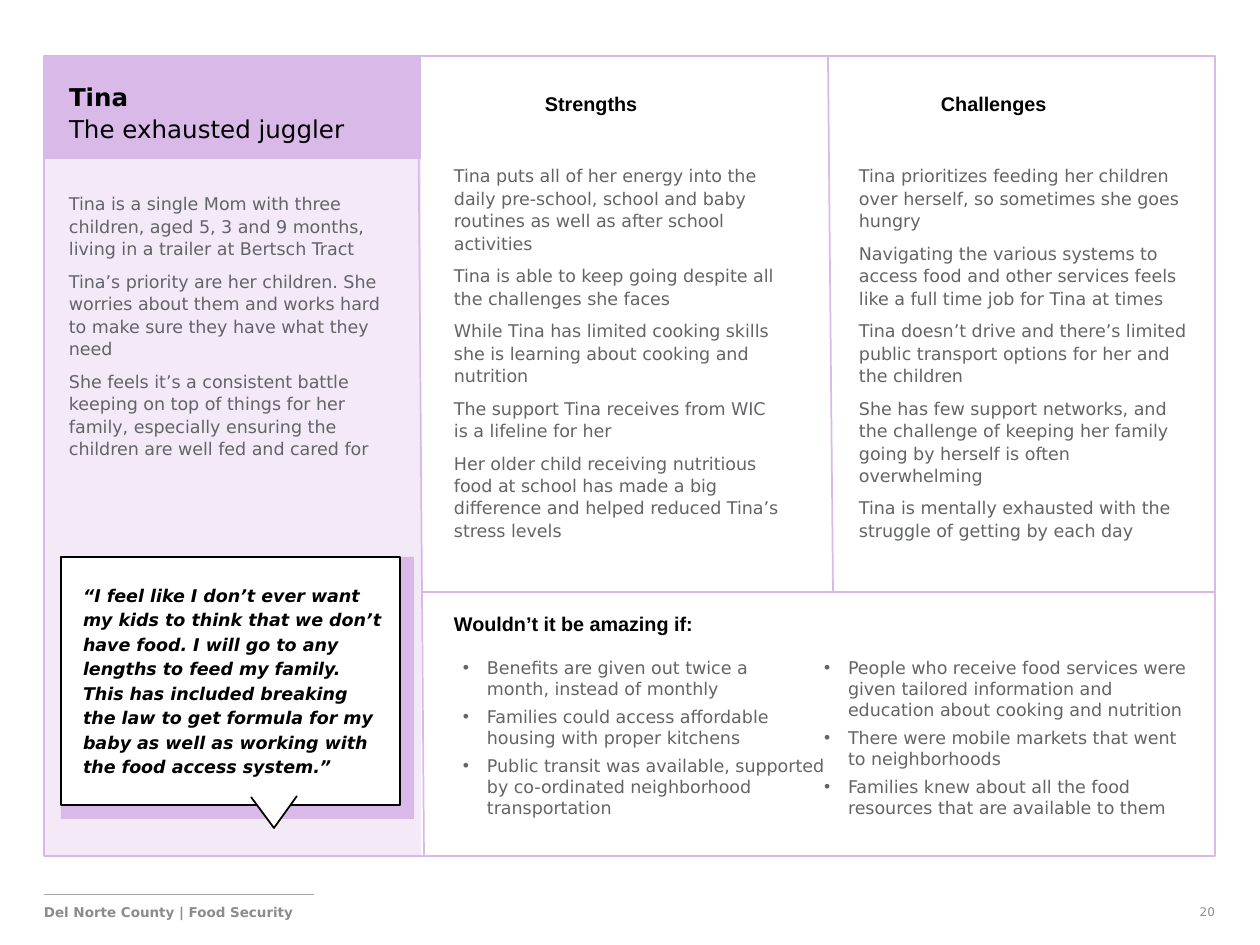
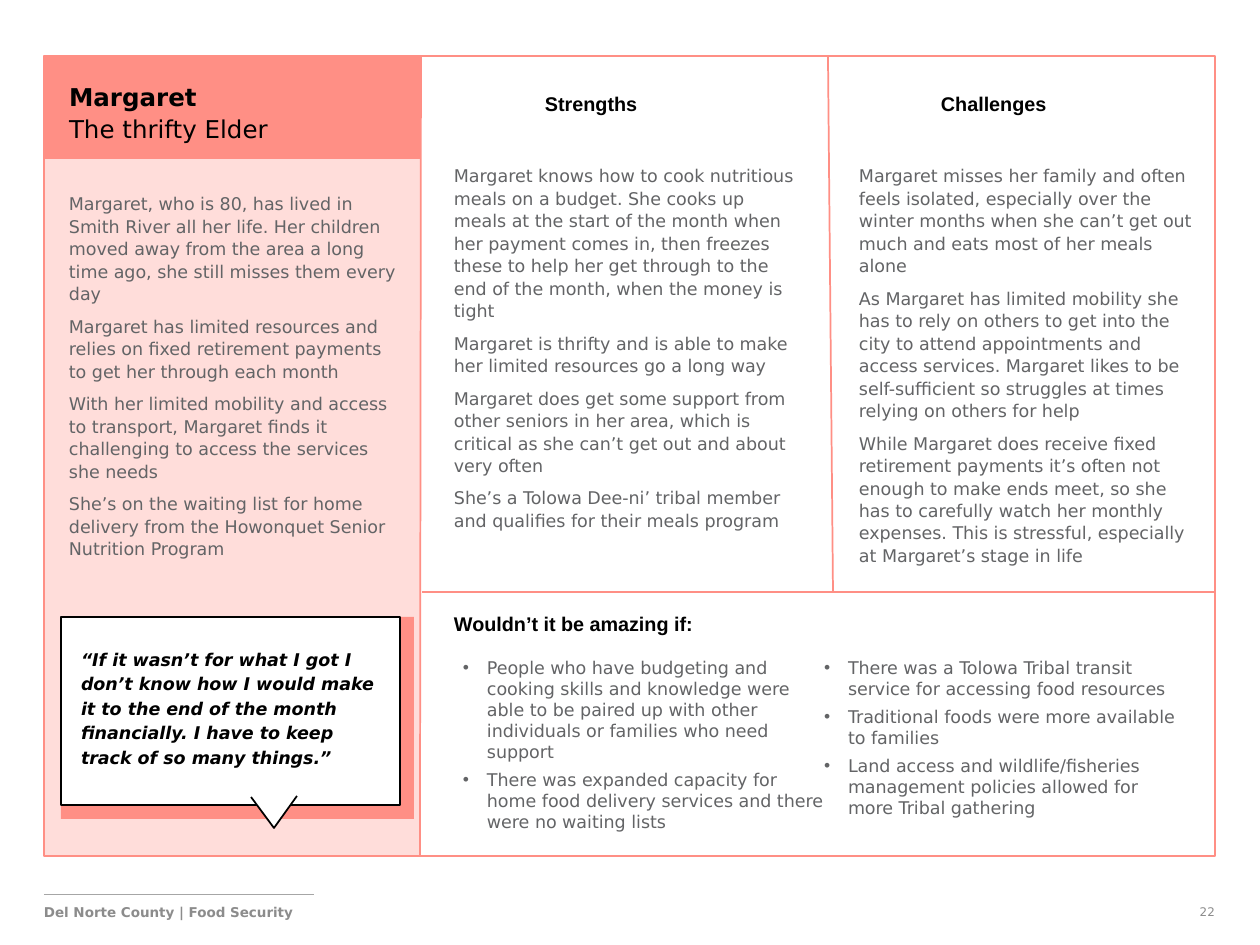
"""Builds two persona pages on food security."""
from copy import deepcopy
from dataclasses import dataclass, replace

from lxml import etree
from pptx import Presentation
from pptx.dml.color import RGBColor
from pptx.enum.shapes import MSO_CONNECTOR, MSO_SHAPE
from pptx.enum.text import MSO_ANCHOR, MSO_AUTO_SIZE, PP_ALIGN
from pptx.oxml.ns import qn
from pptx.util import Emu, Pt

SCALE = 914400 / 126
LEFT, RIGHT = PP_ALIGN.LEFT, PP_ALIGN.RIGHT
TOP, NO_FIT = MSO_ANCHOR.TOP, MSO_AUTO_SIZE.NONE
RECTANGLE, STRAIGHT = MSO_SHAPE.RECTANGLE, MSO_CONNECTOR.STRAIGHT

BLACK, WHITE, GRAY = "000000", "FFFFFF", "636466"
FOOTER_GRAY, RULE_GRAY = "8C8C8C", "A6A6A6"
FRAME_LEFT, FRAME_TOP, FRAME_RIGHT, FRAME_BOTTOM = 44, 56, 1215, 856
PANEL_WIDTH, HEADER_HEIGHT = 377, 103
QUOTE_LEFT, QUOTE_WIDTH, QUOTE_BOTTOM = 61, 339, 805
SHADOW_OFFSET = 14
WISH_LEFT, WISH_TOP, WISH_WIDTH, BULLET_INDENT = 463, 657, 361, 24


@dataclass(frozen=True)
class Style:
    """Look of the paragraphs in one box."""
    size: float = 10
    color: str = GRAY
    font: str = "DejaVu Sans"
    bold: bool = False
    italic: bool = False
    spacing: object = 1.07
    gap: float = 0
    align: object = LEFT


BODY = Style(gap=5.7)
WISH = Style(spacing=1.0, gap=4)
TITLE = Style(size=14, color=BLACK)
HEADING = Style(size=11.3, color=BLACK, font="Arial", bold=True)
QUOTE = Style(color=BLACK, bold=True, italic=True, spacing=Pt(14))
FOOTER = Style(size=7.7, color=FOOTER_GRAY, bold=True, spacing=1.0)
NUMBER = replace(FOOTER, size=6.8, bold=False, align=RIGHT)


@dataclass
class Persona:
    """Everything that differs from one page to the next."""
    name: str
    role: str
    accent: str
    number: str
    story: list
    strengths: list
    challenges: list
    wishes: list
    quote: str
    quote_top: int
    quote_text: tuple
    side_line: tuple


PERSONAS = [
    Persona(
        name="Tina", role="The exhausted juggler", accent="D8B9E7", number="20",
        story=[
            "Tina is a single Mom with three children, aged 5, 3 and 9 months, "
            "living in a trailer at Bertsch Tract",
            "Tina’s priority are her children. She worries about them and works "
            "hard to make sure they have what they need",
            "She feels it’s a consistent battle keeping on top of things for her "
            "family, especially ensuring the children are well fed and cared for",
        ],
        strengths=[
            "Tina puts all of her energy into the daily pre-school, school and "
            "baby routines as well as after school activities",
            "Tina is able to keep going despite all the challenges she faces",
            "While Tina has limited cooking skills she is learning about cooking "
            "and nutrition",
            "The support Tina receives from WIC \vis a lifeline for her",
            "Her older child receiving nutritious food at school has made a big "
            "difference and helped reduced Tina’s stress levels",
        ],
        challenges=[
            "Tina prioritizes feeding her children over herself, so sometimes "
            "she goes hungry",
            "Navigating the various systems to access food and other services "
            "feels like a full time job for Tina at times",
            "Tina doesn’t drive and there’s limited public transport options for "
            "her and the children",
            "She has few support networks, and the challenge of keeping her "
            "family going by herself is often overwhelming",
            "Tina is mentally exhausted with the struggle of getting by each day",
        ],
        wishes=[
            ["Benefits are given out twice a \vmonth, instead of monthly",
             "Families could access affordable housing with proper kitchens",
             "Public transit was available, supported by co-ordinated "
             "neighborhood transportation"],
            ["People who receive food services were given tailored information "
             "and education about cooking and nutrition",
             "There were mobile markets that went to neighborhoods",
             "Families knew about all the food resources that are available to "
             "them"],
        ],
        quote="“I feel like I don’t ever want my kids to think that we don’t have "
              "food. I will go to any lengths to feed my family. This has included "
              "breaking the law to get formula for my baby as well as working with "
              "the food access system.”",
        quote_top=557, quote_text=(79, 577, 309, 220),
        side_line=(418, 63, 424, 856),
    ),
    Persona(
        name="Margaret", role="The thrifty Elder", accent="FF8F85", number="22",
        story=[
            "Margaret, who is 80, has lived in Smith River all her life. Her "
            "children moved away from the area a long time ago, she still misses "
            "them every day",
            "Margaret has limited resources and relies on fixed retirement "
            "payments to get her through each month",
            "With her limited mobility and access to transport, Margaret finds "
            "it challenging to access the services she needs",
            "She’s on the waiting list for home delivery from the Howonquet "
            "Senior Nutrition Program",
        ],
        strengths=[
            "Margaret knows how to cook nutritious meals on a budget. She cooks "
            "up meals at the start of the month when her payment comes in, then "
            "freezes these to help her get through to the end of the month, when "
            "the money is tight",
            "Margaret is thrifty and is able to make her limited resources go a "
            "long way",
            "Margaret does get some support from other seniors in her area, "
            "which is critical as she can’t get out and about very often",
            "She’s a Tolowa Dee-ni’ tribal member and qualifies for their meals "
            "program",
        ],
        challenges=[
            "Margaret misses her family and often feels isolated, especially "
            "over the winter months when she can’t get out much and eats most of "
            "her meals alone",
            "As Margaret has limited mobility she has to rely on others to get "
            "into the city to attend appointments and access services. Margaret "
            "likes to be self-sufficient so struggles at times relying on others "
            "for help",
            "While Margaret does receive fixed retirement payments it’s often "
            "not enough to make ends meet, so she has to carefully watch her "
            "monthly expenses. This is stressful, especially at Margaret’s stage "
            "in life",
        ],
        wishes=[
            ["People who have budgeting and cooking skills and knowledge were "
             "able to be paired up with other individuals or families who need "
             "support",
             "There was expanded capacity for home food delivery services and "
             "there were no waiting lists"],
            ["There was a Tolowa Tribal transit service for accessing food "
             "resources",
             "Traditional foods were more available to families",
             "Land access and wildlife/fisheries management policies allowed for "
             "more Tribal gathering"],
        ],
        quote="“If it wasn’t for what I got I don’t know how I would make it to "
              "the end of the month financially. I have to keep track of so many "
              "things.”",
        quote_top=617, quote_text=(77, 641, 307, 155),
        side_line=(421, 56, 420, 856),
    ),
]


def px(*lengths):
    """Turn px lengths into EMU."""
    return [Emu(round(length * SCALE)) for length in lengths]


def rgb(color):
    """Turn a hex string into a colour."""
    return RGBColor.from_string(color)


def paint(shape, fill=None, line=None, alpha=None):
    """Set fill and outline of a shape, and take its shadow away."""
    shape.shadow.inherit = False
    if fill:
        shape.fill.solid()
        shape.fill.fore_color.rgb = rgb(fill)
    else:
        shape.fill.background()
    if alpha:
        color = shape.element.spPr.find(qn("a:solidFill")).find(qn("a:srgbClr"))
        etree.SubElement(color, qn("a:alpha"), val=str(alpha * 1000))
    if line:
        shape.line.color.rgb = rgb(line)
        shape.line.width = Pt(1)
    else:
        shape.line.fill.background()


def add_rectangle(page, left, top, width, height, **look):
    """Add a painted rectangle."""
    paint(page.shapes.add_shape(RECTANGLE, *px(left, top, width, height)), **look)


def add_line(page, ends, color, width=1):
    """Add a straight line between two points."""
    line = page.shapes.add_connector(STRAIGHT, *px(*ends))
    line.line.color.rgb = rgb(color)
    line.line.width = Pt(width)
    etree.SubElement(line.element.spPr, qn("a:effectLst"))


def write(box, lines, style, insets=(4, 4, 4, 4), wrap=True):
    """Fill a box with paragraphs of one style."""
    frame = box.text_frame
    frame.word_wrap, frame.auto_size, frame.vertical_anchor = wrap, NO_FIT, TOP
    (frame.margin_left, frame.margin_top,
     frame.margin_right, frame.margin_bottom) = px(*insets)
    frame.text = "\n".join(lines)
    for index, para in enumerate(frame.paragraphs):
        para.alignment, para.line_spacing = style.align, style.spacing
        para.space_before = Pt(style.gap if index else 0)
        for span in para.runs:
            font = span.font
            font.name, font.size, font.color.rgb = style.font, Pt(style.size), rgb(style.color)
            font.bold, font.italic = style.bold, style.italic
        for line_break in para._p.findall(qn("a:br")):
            line_break.append(deepcopy(para.runs[0]._r.rPr))


def add_text(page, area, lines, style, **layout):
    """Add a text box."""
    write(page.shapes.add_textbox(*px(*area)), lines, style, **layout)


def fill_placeholder(page, box, area, lines, style, **layout):
    """Move a placeholder to the front and fill it."""
    box.left, box.top, box.width, box.height = px(*area)
    page.shapes.element.append(box.element)
    write(box, lines, style, **layout)


def add_bullets(box):
    """Give each paragraph a hanging bullet."""
    indent = px(BULLET_INDENT)[0]
    for para in box.text_frame.paragraphs:
        properties = para._p.get_or_add_pPr()
        properties.set("marL", str(indent))
        properties.set("indent", str(-indent))
        etree.SubElement(properties, qn("a:buChar"), char="•")


def add_grid(page, persona):
    """Draw the side panel, the frame and the dividing lines."""
    accent = persona.accent
    body_top = FRAME_TOP + HEADER_HEIGHT
    add_rectangle(page, FRAME_LEFT, body_top, PANEL_WIDTH, FRAME_BOTTOM - body_top,
                  fill=accent, alpha=30)
    add_rectangle(page, FRAME_LEFT, FRAME_TOP, PANEL_WIDTH, HEADER_HEIGHT, fill=accent)
    for ends in [(828, FRAME_TOP, 833, 592), (FRAME_RIGHT, 592, 422, 592), persona.side_line]:
        add_line(page, ends, accent)
    add_rectangle(page, FRAME_LEFT, FRAME_TOP, FRAME_RIGHT - FRAME_LEFT,
                  FRAME_BOTTOM - FRAME_TOP, line=accent)


def add_quote(page, persona):
    """Draw the speech bubble with its offset block and pointer."""
    top, height = persona.quote_top, QUOTE_BOTTOM - persona.quote_top
    add_rectangle(page, QUOTE_LEFT, top, QUOTE_WIDTH + SHADOW_OFFSET,
                  height + SHADOW_OFFSET, fill=persona.accent)
    add_rectangle(page, QUOTE_LEFT, top, QUOTE_WIDTH, height, fill=WHITE, line=BLACK)
    add_text(page, persona.quote_text, [persona.quote], QUOTE)
    builder = page.shapes.build_freeform(251, 797, scale=SCALE)
    builder.add_line_segments([(274, 828), (297, 796)], close=False)
    paint(builder.convert_to_shape(), fill=WHITE, line=BLACK)


def add_footer(page, number):
    """Add the footer rule, its label and the page number."""
    add_text(page, (FRAME_LEFT, 895, 539, 35), ["Del Norte County | Food Security"],
             FOOTER, insets=(0, 9, 0, 0))
    add_text(page, (949, 895, 266, 29), [number], NUMBER, insets=(0, 10, 0, 0))
    add_line(page, (FRAME_LEFT, 894, 314, 894), RULE_GRAY, 0.5)


def add_persona(deck, persona):
    """Build one persona page."""
    page = deck.slides.add_slide(deck.slide_layouts.get_by_name("Two Content"))
    title, *columns = page.placeholders
    add_grid(page, persona)
    fill_placeholder(page, title, (65, 76, 285, 71), [persona.name, persona.role],
                     TITLE, wrap=False)
    title.text_frame.paragraphs[0].runs[0].font.bold = True
    add_text(page, (65, 188, 338, 400), persona.story, BODY)
    add_text(page, (450, 160, 354, 400), persona.strengths, BODY)
    add_text(page, (855, 160, 342, 411), persona.challenges, BODY)
    for area, heading in [((541, 86, 100, 30), "Strengths"),
                          ((937, 86, 112, 30), "Challenges"),
                          ((450, 606, 247, 30), "Wouldn’t it be amazing if:")]:
        add_text(page, area, [heading], HEADING, wrap=False)
    for index, (box, wishes) in enumerate(zip(columns, persona.wishes)):
        area = (WISH_LEFT + index * WISH_WIDTH, WISH_TOP, WISH_WIDTH + 2, 190)
        fill_placeholder(page, box, area, wishes, WISH, insets=(0, 0, 0, 0))
        add_bullets(box)
    add_quote(page, persona)
    add_footer(page, persona.number)


def main():
    """Build and save the deck."""
    deck = Presentation()
    deck.slide_width, deck.slide_height = px(1260, 945)
    for persona in PERSONAS:
        add_persona(deck, persona)
    deck.save("out.pptx")


if __name__ == "__main__":
    main()
